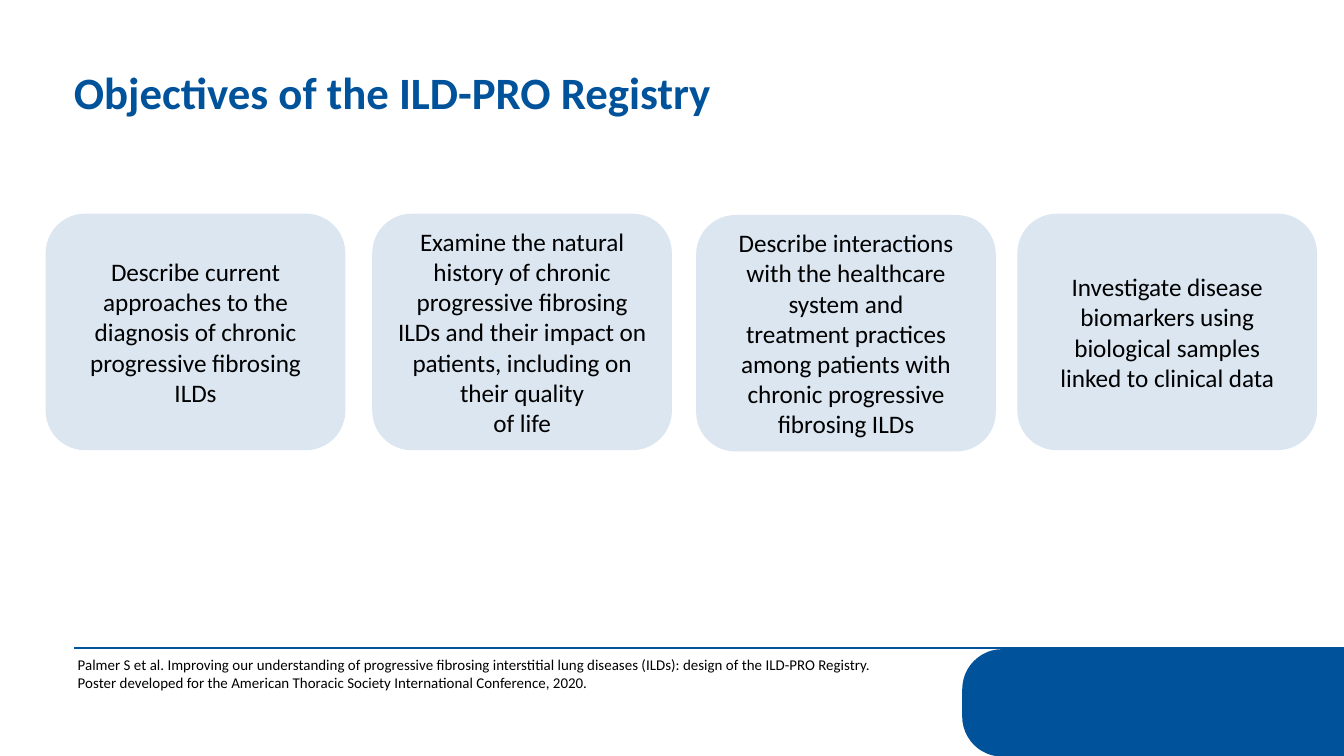
import pptx
import pptx.util
import pptx.dml.color
import pptx.enum.shapes
import pptx.enum.text
import pptx.oxml.ns
from lxml import etree
from pptx.util import Inches, Pt

# Content
TITLE = "Objectives of the ILD-PRO Registry"
OBJECTIVES = [
    ["Describe current approaches to the diagnosis of chronic",
     "progressive fibrosing ILDs"],
    ["Examine the natural history of chronic progressive fibrosing ILDs "
     "and their impact on patients, including on their quality",
     "of life"],
    ["Describe interactions with the healthcare system and",
     "treatment practices among patients with chronic progressive fibrosing ILDs"],
    ["Investigate disease biomarkers using biological samples linked to clinical data"],
]
CITATION = [
    "Palmer S et al. Improving our understanding of progressive fibrosing "
    "interstitial lung diseases (ILDs): design of the ILD-PRO Registry. ",
    "Poster developed for the American Thoracic Society International Conference, 2020.",
]

# Style and card positions
FONT = "Calibri"
BLUE, PALE, BLACK = "00529B", "DBE6F1", "000000"
CARD_WIDTH, CARD_HEIGHT = 2.23, 1.76
CARD_CORNERS = [(0.34, 1.59), (2.77, 1.59), (5.18, 1.6), (7.57, 1.59)]


def paint(color_format, color):
    color_format.rgb = pptx.dml.color.RGBColor.from_string(color)


def add_span(para, text, size, color=BLACK, bold=False):
    span = para.add_run()
    span.text = text
    span.font.name = FONT
    span.font.size = Pt(size)
    span.font.bold = bold
    paint(span.font.color, color)


def add_block(page, kind, left, top, width, height, color):
    block = page.shapes.add_shape(
        kind, Inches(left), Inches(top), Inches(width), Inches(height))
    block.shadow.inherit = False
    block.fill.solid()
    paint(block.fill.fore_color, color)
    block.line.fill.background()
    return block


# Page in 16:9
deck = pptx.Presentation()
deck.slide_width = Inches(10)
deck.slide_height = Inches(10 * 9 / 16)
page = deck.slides.add_slide(deck.slide_layouts[5])
shape_kinds = pptx.enum.shapes.MSO_SHAPE

# Footer tab and rule
tab = add_block(page, shape_kinds.ROUND_2_SAME_RECTANGLE, 8.18, 3.81, 0.8, 2.84, BLUE)
tab.rotation = 270
tab.adjustments[0], tab.adjustments[1] = 0.373, 0

rule = page.shapes.add_connector(
    pptx.enum.shapes.MSO_CONNECTOR.STRAIGHT,
    Inches(0.55), Inches(4.82), Inches(10), Inches(4.82))
paint(rule.line.color, BLUE)
rule.line.width = Pt(1.25)
etree.SubElement(rule._element.spPr, pptx.oxml.ns.qn("a:effectLst"))

# Title
title = page.shapes.title
title.left, title.top = Inches(0.55), Inches(0.48)
title.width, title.height = Inches(8.86), Inches(0.74)
frame = title.text_frame
frame.word_wrap = True
frame.auto_size = pptx.enum.text.MSO_AUTO_SIZE.NONE
frame.vertical_anchor = pptx.enum.text.MSO_ANCHOR.TOP
frame.margin_left, frame.margin_right = 0, Inches(0.1)
frame.margin_top = frame.margin_bottom = Inches(0.05)
para = frame.paragraphs[0]
para.alignment = pptx.enum.text.PP_ALIGN.LEFT
para.line_spacing = 0.9
add_span(para, TITLE, 24, BLUE, bold=True)

# Objective cards
for (left, top), lines in zip(CARD_CORNERS, OBJECTIVES):
    card = add_block(page, shape_kinds.ROUNDED_RECTANGLE,
                     left, top, CARD_WIDTH, CARD_HEIGHT, PALE)
    frame = card.text_frame
    frame.word_wrap = True
    frame.vertical_anchor = pptx.enum.text.MSO_ANCHOR.MIDDLE
    for index, line in enumerate(lines):
        para = frame.add_paragraph() if index else frame.paragraphs[0]
        para.alignment = pptx.enum.text.PP_ALIGN.CENTER
        add_span(para, line, 13.5)

# Citation
box = page.shapes.add_textbox(Inches(0.48), Inches(4.83), Inches(6.68), Inches(0.37))
box.text_frame.word_wrap = True
box.text_frame.auto_size = pptx.enum.text.MSO_AUTO_SIZE.SHAPE_TO_FIT_TEXT
para = box.text_frame.paragraphs[0]
for index, line in enumerate(CITATION):
    if index:
        para.add_line_break()
    add_span(para, line, 8)

deck.save("out.pptx")
